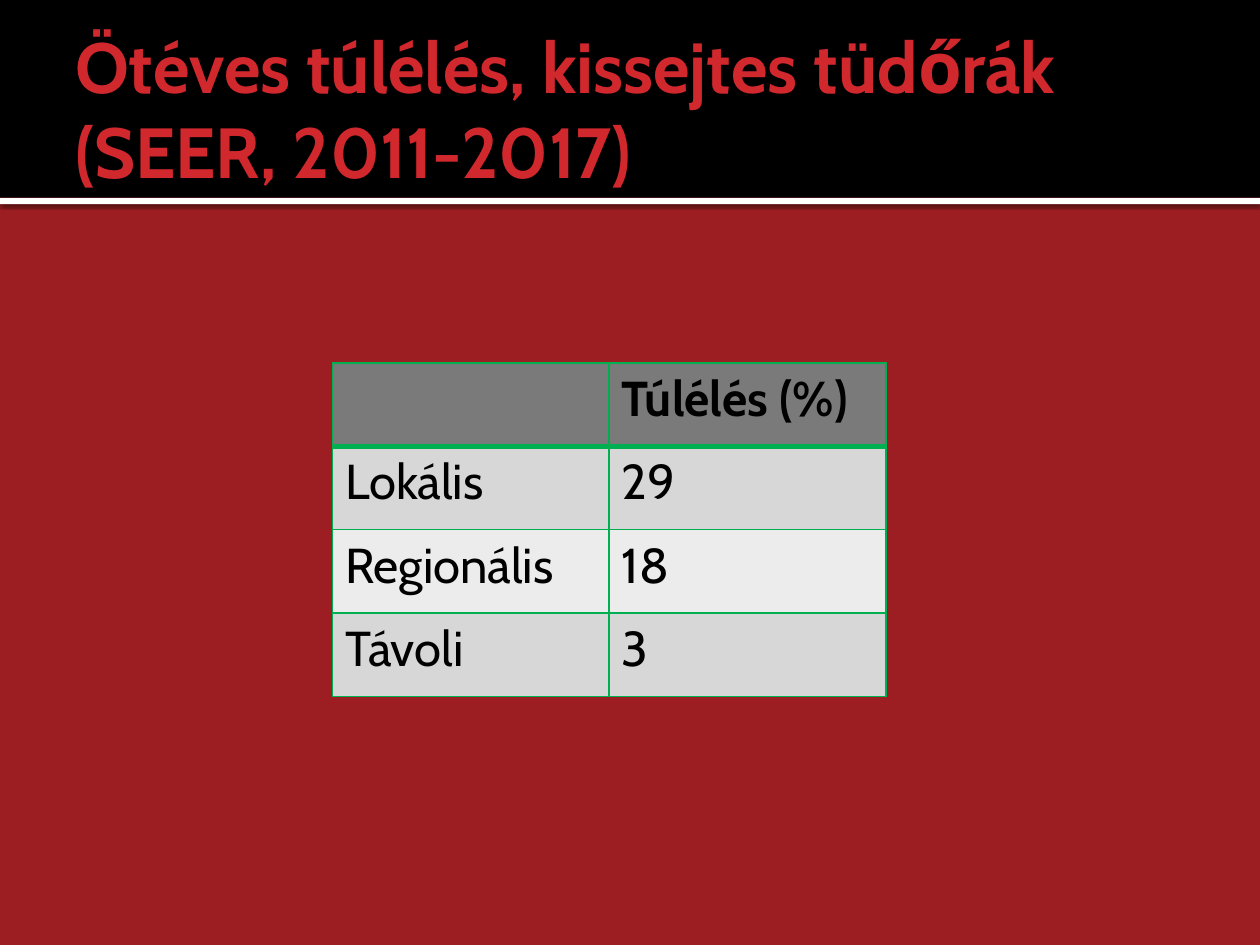
from lxml.etree import SubElement
from pptx import Presentation
from pptx.dml.color import RGBColor
from pptx.enum.shapes import MSO_SHAPE
from pptx.enum.text import MSO_ANCHOR
from pptx.oxml.ns import qn
from pptx.util import Inches, Pt

RED = RGBColor(0x9D, 0x1E, 0x22)
BRIGHT = RGBColor(0xD1, 0x28, 0x2E)
BLACK = RGBColor(0, 0, 0)
WHITE = RGBColor(0xFF, 0xFF, 0xFF)
GREEN = RGBColor(0x00, 0xB0, 0x50)
HEAD = RGBColor(0x7A, 0x7A, 0x7A)
BANDS = RGBColor(0xEC, 0xEC, 0xEC), RGBColor(0xD7, 0xD7, 0xD7)

ROWS = [
    ("", "Túlélés (%)"),
    ("Lokális", "29"),
    ("Regionális", "18"),
    ("Távoli", "3"),
]


def add_tint(parent, color):
    return SubElement(parent, qn("a:srgbClr"), val=str(color))


class Page:
    font = "Cabin"

    def __init__(self, deck, back):
        self.slide = deck.slides.add_slide(deck.slide_layouts[6])
        fill = self.slide.background.fill
        fill.solid()
        fill.fore_color.rgb = back

    def style(self, frame, size, color, bold):
        for para in frame.paragraphs:
            for run in para.runs:
                font = run.font
                font.name, font.size, font.bold = self.font, Pt(size), bold
                font.color.rgb = color

    def bar(self, top, height, color):
        shape = self.slide.shapes.add_shape(
            MSO_SHAPE.RECTANGLE, 0, Inches(top), Inches(10), Inches(height))
        shape.shadow.inherit = False
        shape.fill.solid()
        shape.fill.fore_color.rgb = color
        shape.line.fill.background()
        return shape

    def shade(self, shape):
        """Drop a soft shadow straight down."""
        effects = shape._element.spPr.find(qn("a:effectLst"))
        shadow = SubElement(effects, qn("a:outerShdw"), blurRad=str(Pt(2.5)),
                            dist=str(Pt(0.8)), dir="5400000", rotWithShape="0")
        SubElement(add_tint(shadow, BLACK), qn("a:alpha"), val="60000")

    def title(self, text, left, top, width, height):
        box = self.slide.shapes.add_textbox(
            Inches(left), Inches(top), Inches(width), Inches(height))
        frame = box.text_frame
        frame.word_wrap = True
        frame.vertical_anchor = MSO_ANCHOR.MIDDLE
        frame.margin_left = Inches(0.1)
        frame.margin_right = frame.margin_top = frame.margin_bottom = Inches(0.05)
        frame.text = text
        self.style(frame, 40.5, BRIGHT, True)

    def edge(self, cell, side, width):
        line = SubElement(cell._tc.get_or_add_tcPr(), qn("a:ln" + side),
                          w=str(Pt(width)))
        add_tint(SubElement(line, qn("a:solidFill")), GREEN)

    def table(self, rows, left, top, width, height):
        table = self.slide.shapes.add_table(
            len(rows), len(rows[0]), Inches(left), Inches(top),
            Inches(width), Inches(height)).table
        for r, row in enumerate(rows):
            for c, text in enumerate(row):
                cell = table.cell(r, c)
                for side in "LRTB":
                    thick = (r, side) in ((0, "B"), (1, "T"))
                    self.edge(cell, side, 3 if thick else 1)
                cell.fill.solid()
                cell.fill.fore_color.rgb = BANDS[r % 2] if r else HEAD
                cell.text_frame.text = text
                self.style(cell.text_frame, 28, BLACK, r == 0)


def main():
    deck = Presentation()
    deck.slide_width, deck.slide_height = Inches(10), Inches(7.5)
    page = Page(deck, RED)
    page.shade(page.bar(1.57, 0.05, WHITE))
    page.bar(0, 1.57, BLACK)
    page.title("Ötéves túlélés, kissejtes tüdőrák (SEER, 2011-2017)",
               0.5, 0.17, 9, 1.37)
    page.table(ROWS, 2.64, 2.88, 4.39, 2.65)
    deck.save("out.pptx")


if __name__ == "__main__":
    main()
